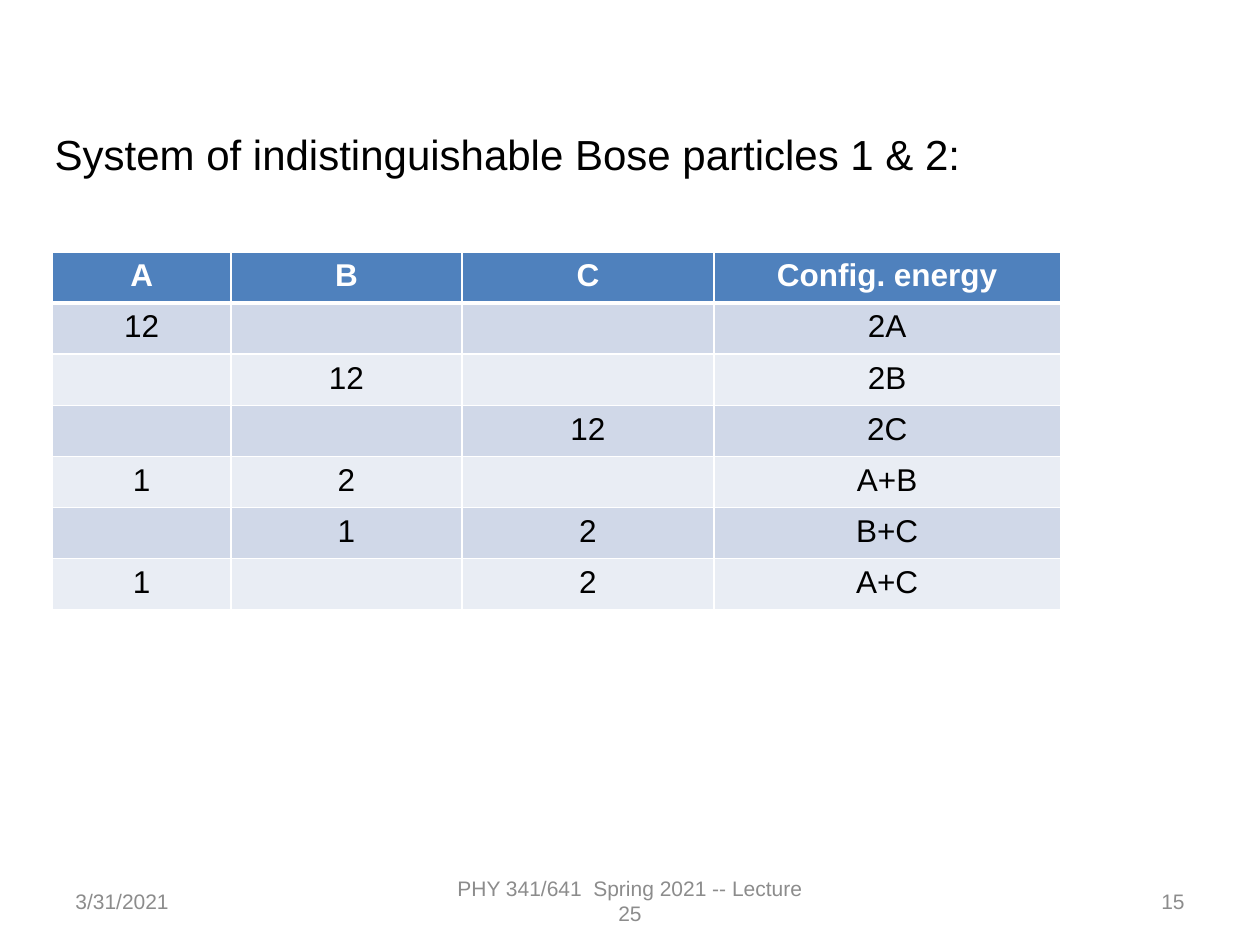
import pptx
import pptx.util
import pptx.dml.color
import pptx.enum.text
import pptx.oxml
import pptx.oxml.ns

Pt = pptx.util.Pt
RGB = pptx.dml.color.RGBColor.from_string
ALIGN = pptx.enum.text.PP_ALIGN
ANCHOR = pptx.enum.text.MSO_ANCHOR

THEME = {
    "font": "Arial",
    "text": "000000", "muted": "8C8C8C", "white": "FFFFFF",
    "header": "4F81BD", "bands": ["E9EDF4", "D0D8E8"],
    "title_size": 24, "table_size": 18, "footer_size": 12,
}


def write(tf, text, size, color=THEME["text"], bold=False, align=ALIGN.LEFT):
    p = tf.paragraphs[0]
    p.alignment = align
    p.font.size = Pt(size)
    if text:
        r = p.add_run()
        r.text = text
        r.font.name = THEME["font"]
        r.font.size = Pt(size)
        r.font.bold = bold
        r.font.color.rgb = RGB(color)


def add_border(cell, side, width):
    cell._tc.get_or_add_tcPr().append(pptx.oxml.parse_xml(
        f'<a:ln{side} {pptx.oxml.ns.nsdecls("a")} w="{Pt(width)}"><a:solidFill>'
        f'<a:srgbClr val="{THEME["white"]}"/></a:solidFill></a:ln{side}>'))


prs = pptx.Presentation()
prs.slide_width, prs.slide_height = Pt(720), Pt(540)
s = prs.slides.add_slide(prs.slide_layouts[5])

title = s.shapes.title
title.left, title.top, title.width, title.height = Pt(24), Pt(70), Pt(672), Pt(36)
tf = title.text_frame
tf.word_wrap = True
tf.auto_size = pptx.enum.text.MSO_AUTO_SIZE.NONE
tf.vertical_anchor = ANCHOR.TOP
write(tf, "System of indistinguishable Bose particles 1 & 2:", THEME["title_size"])

rows = [
    ["A", "B", "C", "Config. energy"],
    ["12", "", "", "2A"],
    ["", "12", "", "2B"],
    ["", "", "12", "2C"],
    ["1", "2", "", "A+B"],
    ["", "1", "2", "B+C"],
    ["1", "", "2", "A+C"],
]
col_widths = [102, 132, 144, 198]
row_height = 29.2
table = s.shapes.add_table(
    len(rows), len(col_widths), Pt(30), Pt(144),
    Pt(sum(col_widths)), Pt(row_height * len(rows))).table
for col, width in zip(table.columns, col_widths):
    col.width = Pt(width)
for i, row in enumerate(rows):
    table.rows[i].height = Pt(row_height)
    header = i == 0
    for j, text in enumerate(row):
        cell = table.cell(i, j)
        for side in "LRTB":
            heavy = (header and side == "B") or (i == 1 and side == "T")
            add_border(cell, side, 3 if heavy else 1)
        cell.fill.solid()
        cell.fill.fore_color.rgb = RGB(THEME["header"] if header else THEME["bands"][i % 2])
        write(cell.text_frame, text, THEME["table_size"],
              color=THEME["white"] if header else THEME["text"],
              bold=header, align=ALIGN.CENTER)

footers = [
    ("3/31/2021", 36, 168, ALIGN.LEFT),
    ("PHY 341/641  Spring 2021 -- Lecture 25", 246, 228, ALIGN.CENTER),
    ("15", 516, 168, ALIGN.RIGHT),
]
for text, left, width, align in footers:
    sp = s.shapes.add_textbox(Pt(left), Pt(500.5), Pt(width), Pt(28.75))
    tf = sp.text_frame
    tf.word_wrap = True
    tf.vertical_anchor = ANCHOR.MIDDLE
    write(tf, text, THEME["footer_size"], color=THEME["muted"], align=align)

prs.save("out.pptx")
